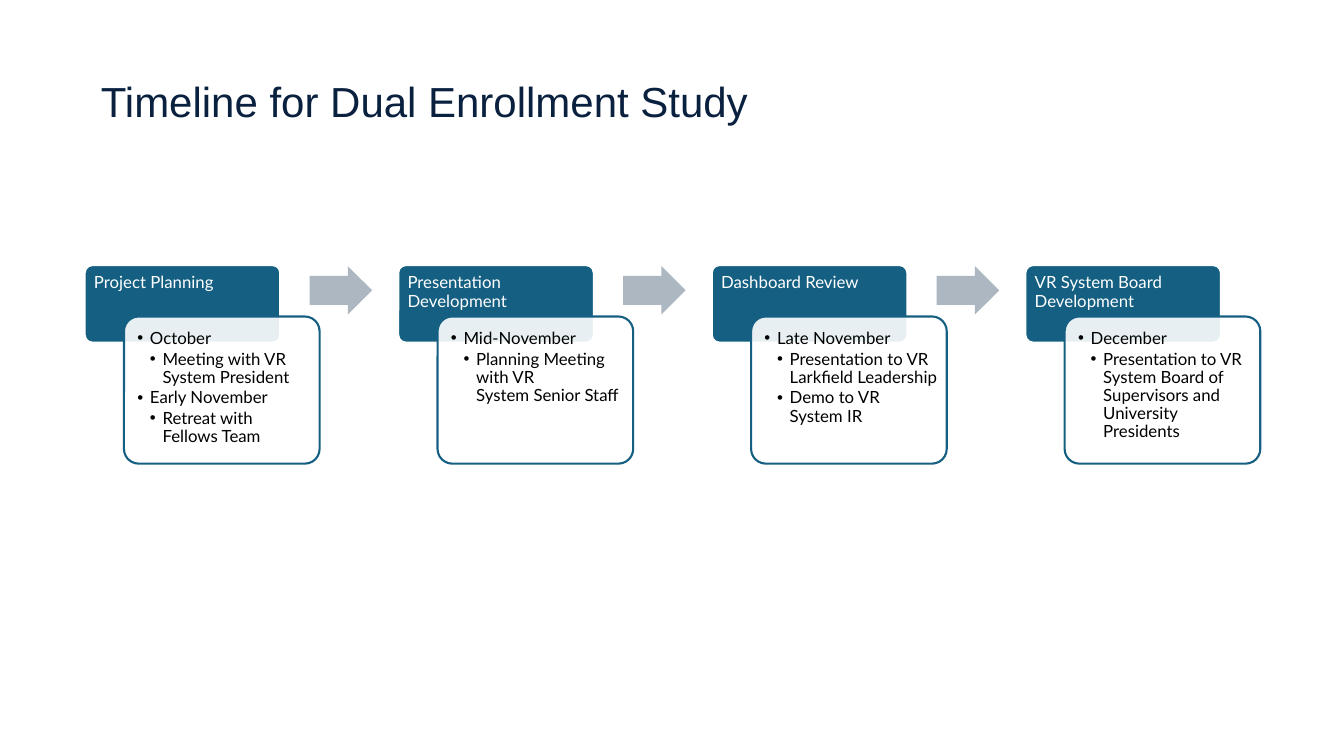
from pptx import Presentation
from pptx import util as u
from pptx.dml.color import RGBColor
from pptx.enum import shapes, text
from pptx.oxml.ns import qn
from lxml import etree

WIDE, HIGH = 13.33, 7.5
LEFT, TOP, PITCH = 0.84, 2.63, 3.11
KIND = shapes.MSO_SHAPE
TEAL, WHITE, BLACK, GREY, NAVY = "156082", "FFFFFF", "000000", "ACB7C1", "09203F"
STAFF = chr(160).join(("System", "Senior", "Staff"))
STEPS = [
    ("Project Planning", [
        (0, "October"), (1, "Meeting with VR System President"),
        (0, "Early November"), (1, "Retreat with Fellows Team")]),
    ("Presentation Development", [
        (0, "Mid-November"), (1, f"Planning Meeting with VR {STAFF}")]),
    ("Dashboard Review", [
        (0, "Late November"), (1, "Presentation to VR Larkfield Leadership"),
        (1, "Demo to VR System IR")]),
    ("VR System Board Development", [
        (0, "December"),
        (1, "Presentation to VR System Board of Supervisors and University Presidents")]),
]


def paint(part, tone):
    """Give a fill or font colour its hex tone."""
    part.rgb = RGBColor.from_string(tone)


def apply(item, form):
    """Set every attribute named in a dict of format values."""
    for name, value in form.items():
        setattr(item, name, value)


def shape(slide, kind, box, fill, edge=None, turns=(0.1,)):
    """Add a flat preset shape in a box given in inches."""
    item = slide.shapes.add_shape(kind, *map(u.Inches, box))
    item.shadow.inherit = False
    item.fill.solid()
    paint(item.fill.fore_color, fill)
    if edge:
        paint(item.line.color, edge)
        item.line.width = u.Pt(1.5)
    else:
        item.line.fill.background()
    for spot, turn in enumerate(turns):
        item.adjustments[spot] = turn
    return item


def frame(item, pads, anchor=text.MSO_ANCHOR.TOP):
    """Set wrap, anchor and left, top, right, bottom insets of a text frame."""
    body = item.text_frame
    sides = ("margin_left", "margin_top", "margin_right", "margin_bottom")
    apply(body, dict(zip(sides, map(u.Inches, pads)), word_wrap=True,
                     vertical_anchor=anchor))
    return body


def write(para, words, size, face, tone, **form):
    """Fill a left-aligned paragraph with one styled run."""
    apply(para, {"alignment": text.PP_ALIGN.LEFT, **form})
    run = para.add_run()
    run.text = words
    apply(run.font, {"size": u.Pt(size), "name": face})
    paint(run.font.color, tone)


def bullet(para, level):
    """Hang a bullet one eighth of an inch per level."""
    props = para._p.get_or_add_pPr()
    props.set("marL", str(u.Inches(0.125 * (level + 1))))
    props.set("indent", str(-u.Inches(0.125)))
    etree.SubElement(props, qn("a:buFont")).set("typeface", "Arial")
    etree.SubElement(props, qn("a:buChar")).set("char", "•")


def title(slide, box, words):
    """Place the slide heading at the foot of its box."""
    item = slide.shapes.add_textbox(*map(u.Inches, box))
    body = frame(item, (0, 0, 0, 0.1), text.MSO_ANCHOR.BOTTOM)
    write(body.paragraphs[0], words, 30, "Arial", NAVY)


def step(slide, left, top, head, notes):
    """Draw a stage tab with its overlapping card of dated notes."""
    tab = shape(slide, KIND.ROUNDED_RECTANGLE, (left, top, 1.94, 0.77), TEAL, WHITE)
    body = frame(tab, (0.07, 0.07, 0.07, 0.05))
    write(body.paragraphs[0], head, 12, "Lato", WHITE, line_spacing=0.9)

    card = shape(slide, KIND.ROUNDED_RECTANGLE,
                 (left + 0.39, top + 0.51, 1.94, 1.46), WHITE, TEAL)
    tone = card.fill._xPr.find(qn("a:solidFill"))[0]
    etree.SubElement(tone, qn("a:alpha")).set("val", "90000")
    body = frame(card, (0.09, 0.09, 0.05, 0.09))
    for spot, (level, words) in enumerate(notes):
        para = body.add_paragraph() if spot else body.paragraphs[0]
        write(para, words, 12, "Lato", BLACK, level=level,
              line_spacing=0.9, space_after=u.Pt(1.8))
        bullet(para, level)


def flow(slide, left, top):
    """Lay the stages out in equal columns with arrows between them."""
    for col, (head, notes) in enumerate(STEPS):
        start = left + col * PITCH
        if col:
            shape(slide, KIND.RIGHT_ARROW, (start - 0.88, top + 0.01, 0.62, 0.48),
                  GREY, turns=(0.6, 0.5))
        step(slide, start, top, head, notes)


def main():
    """Build and save the timeline slide."""
    deck = Presentation()
    apply(deck, {"slide_width": u.Inches(WIDE), "slide_height": u.Inches(HIGH)})
    slide = deck.slides.add_slide(deck.slide_layouts[6])
    title(slide, (1, 0.74, 10.12, 0.61), "Timeline for Dual Enrollment Study")
    flow(slide, LEFT, TOP)
    deck.save("out.pptx")


if __name__ == "__main__":
    main()
